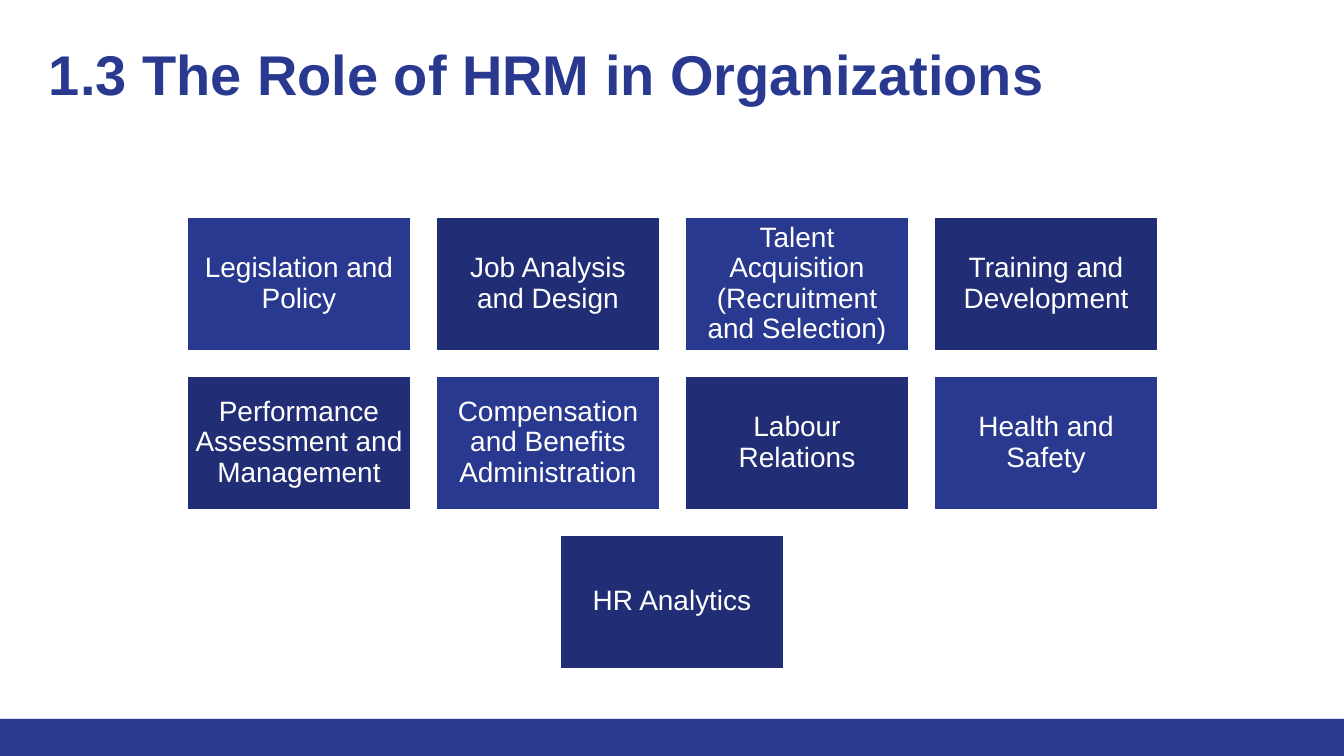
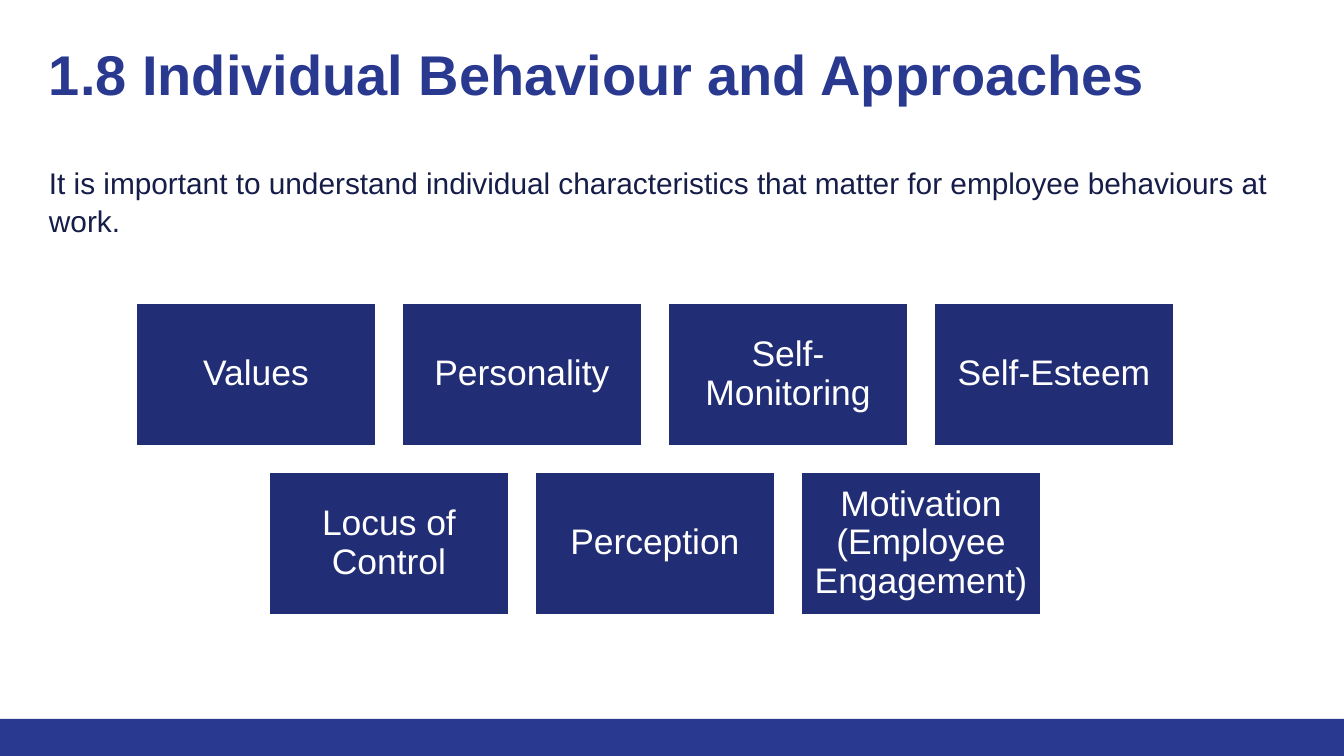
from itertools import cycle

from pptx import Presentation
from pptx import util as u
from pptx.dml.color import RGBColor
from pptx.enum import shapes, text

WIDTH, HEIGHT = 1344, 756
EMU_PER_PX = u.Inches(10) / WIDTH
FONT = "Arial"
COLORS = {"blue": "2A3990", "navy": "212D74", "ink": "151D48", "white": "FFFFFF"}


def px(length):
    return u.Emu(round(length * EMU_PER_PX))


def rgb(name):
    return RGBColor.from_string(COLORS[name])


class Deck:
    """Holds the shared style and the slide being filled."""

    def __init__(self):
        self.prs = Presentation()
        self.prs.slide_width, self.prs.slide_height = px(WIDTH), px(HEIGHT)
        self.slide = None

    def add_slide(self, heading, width, height):
        self.slide = self.prs.slides.add_slide(self.prs.slide_layouts[6])
        self.rect(0, 719, WIDTH, HEIGHT - 719, "blue")
        self.textbox(heading, 36, 27, width, height, 30, "blue", bold=True)

    def rect(self, left, top, width, height, fill, border=None):
        block = self.slide.shapes.add_shape(
            shapes.MSO_SHAPE.RECTANGLE, px(left), px(top), px(width), px(height))
        block.shadow.inherit = False
        block.fill.solid()
        block.fill.fore_color.rgb = rgb(fill)
        if border:
            block.line.color.rgb = rgb(border)
            block.line.width = u.Pt(2)
        else:
            block.line.fill.background()
        return block

    def set_text(self, shape, words, size, color, inset, bold=False, spacing=1.0):
        frame = shape.text_frame
        frame.word_wrap = True
        frame.margin_left = frame.margin_right = px(inset)
        frame.margin_top = frame.margin_bottom = px(inset)
        paragraph = frame.paragraphs[0]
        paragraph.text = words
        paragraph.line_spacing = spacing
        font = paragraph.font
        font.name, font.size, font.bold = FONT, u.Pt(size), bold
        font.color.rgb = rgb(color)
        return frame

    def textbox(self, words, left, top, width, height, size, color,
                bold=False, inset=13, spacing=1.0):
        box = self.slide.shapes.add_textbox(px(left), px(top), px(width), px(height))
        return self.set_text(box, words, size, color, inset, bold, spacing)

    def tile(self, words, left, top, width, height, fill, size, inset):
        block = self.rect(left, top, width, height, fill, border="white")
        frame = self.set_text(block, words, size, "white", inset, spacing=0.9)
        frame.vertical_anchor = text.MSO_ANCHOR.MIDDLE
        frame.paragraphs[0].alignment = text.PP_ALIGN.CENTER

    def tile_rows(self, rows, center, top, width, height, gap, size, inset):
        """Each row is (labels, fills); it is centred and its fills alternate."""
        for row, (labels, fills) in enumerate(rows):
            left = center - (len(labels) * (width + gap) - gap) // 2
            for column, (label, fill) in enumerate(zip(labels, cycle(fills))):
                self.tile(label, left + column * (width + gap),
                          top + row * (height + gap), width, height,
                          fill, size, inset)


def hrm_roles(deck):
    deck.add_slide("1.3 The Role of HRM in Organizations", 1253, 89)
    rows = [
        (["Legislation and Policy", "Job Analysis and Design",
          "Talent Acquisition (Recruitment and Selection)",
          "Training and Development"], ["blue", "navy"]),
        (["Performance Assessment and Management",
          "Compensation and Benefits Administration",
          "Labour Relations", "Health and Safety"], ["navy", "blue"]),
        (["HR Analytics"], ["navy"]),
    ]
    deck.tile_rows(rows, center=672, top=216, width=226, height=136,
                   gap=23, size=15, inset=8)


def individual_behaviour(deck):
    deck.add_slide("1.8 Individual Behaviour and Approaches", 1236, 120)
    intro = deck.textbox(
        "It is important to understand individual characteristics that matter "
        "for employee behaviours at work.",
        36, 156, 1269, 86, 16, "ink", spacing=1.05)
    intro.margin_top = intro.margin_bottom = px(7)
    rows = [
        (["Values", "Personality", "Self-Monitoring", "Self-Esteem"], ["navy"]),
        (["Locus of Control", "Perception", "Motivation (Employee Engagement)"],
         ["navy"]),
    ]
    deck.tile_rows(rows, center=655, top=302, width=242, height=145,
                   gap=24, size=19, inset=10)


def main():
    deck = Deck()
    hrm_roles(deck)
    individual_behaviour(deck)
    deck.prs.save("out.pptx")


if __name__ == "__main__":
    main()
